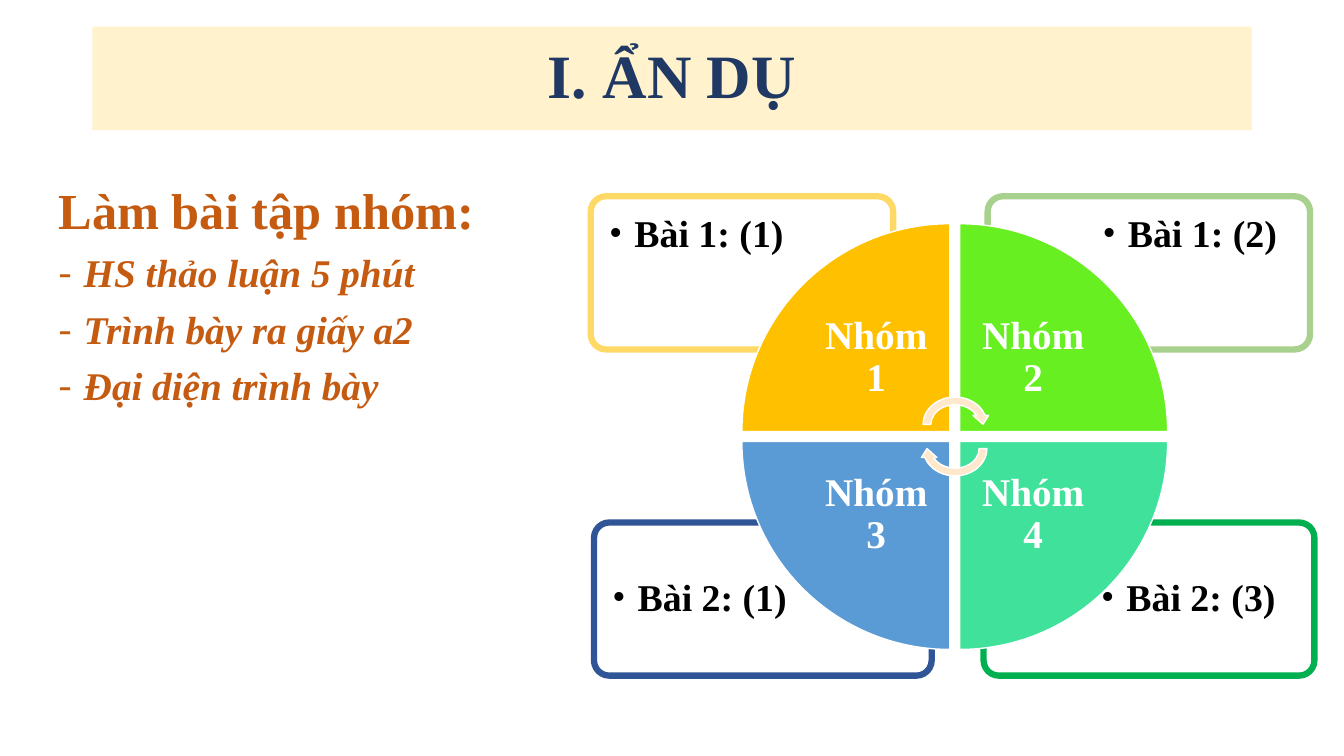
from dataclasses import dataclass

from lxml.etree import SubElement
from pptx import Presentation
from pptx.dml.color import RGBColor
from pptx.enum.shapes import MSO_SHAPE as Preset
from pptx.enum.text import MSO_ANCHOR as Anchor, MSO_AUTO_SIZE as AutoSize, PP_ALIGN as Align
from pptx.oxml.ns import qn
from pptx.shapes.autoshape import Shape
from pptx.slide import Slide
from pptx.text.text import TextFrame, _Paragraph as Paragraph
from pptx.util import Pt


@dataclass(frozen=True)
class Theme:
    font: str = "Times New Roman"
    title_band: str = "FFF2CC"
    title: str = "203864"
    task: str = "C55A11"
    exercise: str = "000000"
    paper: str = "FFFFFF"
    cycle: str = "FFE8CC"
    title_size: float = 44
    heading_size: float = 36
    step_size: float = 28
    group_size: float = 28
    exercise_size: float = 27


@dataclass(frozen=True)
class Group:
    """One quarter of the wheel with its exercise card."""
    label: str
    exercise: str
    col: int
    row: int
    rotation: float
    wedge_color: str
    card_color: str
    card_left: float
    card_width: float


THEME = Theme()
# Back to front
GROUPS = (
    Group("Nhóm 4", "Bài 2: (3)", 1, 1, 180, "3FE19B", "00B050", 702.6, 236.3),
    Group("Nhóm 3", "Bài 2: (1)", 0, 1, 270, "5B9BD5", "2F5597", 424.3, 241.2),
    Group("Nhóm 2", "Bài 1: (2)", 1, 0, 90, "67EF21", "A9D18E", 705.5, 230.3),
    Group("Nhóm 1", "Bài 1: (1)", 0, 0, 0, "FFC000", "FFD966", 422, 216),
)
STEPS = ("HS thảo luận 5 phút", "Trình bày ra giấy a2", "Đại diện trình bày")

CARD_TOP, CARD_PITCH, CARD_HEIGHT = 140.2, 233, 109.4
CARD_TEXT_SHARE, CARD_TEXT_HEIGHT, CARD_EDGE = 0.68, 77.5, 2.4
WHEEL_LEFT, WHEEL_TOP, WEDGE, WEDGE_PITCH = 529.9, 159.8, 148.5, 155.6
LABEL = 105


def add_run(paragraph: Paragraph, words: str, size: float, color: str, italic: bool = False) -> None:
    run = paragraph.add_run()
    run.text = words
    run.font.name = THEME.font
    run.font.size = Pt(size)
    run.font.bold = True
    run.font.italic = italic
    run.font.color.rgb = RGBColor.from_string(color)


def set_bullet(paragraph: Paragraph, mark: str = "") -> None:
    """Give the paragraph a hanging bullet, or none when mark is empty."""
    props = paragraph._p.get_or_add_pPr()
    hang = Pt(18) if mark else 0
    props.set("marL", str(hang))
    props.set("indent", str(-hang))
    if mark:
        SubElement(props, qn("a:buFont")).set("typeface", THEME.font)
        SubElement(props, qn("a:buChar")).set("char", mark)
    else:
        SubElement(props, qn("a:buNone"))


def place(shape: Shape, left: float, top: float, width: float, height: float) -> None:
    shape.left, shape.top, shape.width, shape.height = map(Pt, (left, top, width, height))


def add_preset(slide: Slide, preset: Preset, left: float, top: float, width: float, height: float,
               fill: str, line: str, weight: float, rotation: float = 0) -> Shape:
    shape = slide.shapes.add_shape(preset, *map(Pt, (left, top, width, height)))
    shape.shadow.inherit = False
    shape.fill.solid()
    shape.fill.fore_color.rgb = RGBColor.from_string(fill)
    shape.line.color.rgb = RGBColor.from_string(line)
    shape.line.width = Pt(weight)
    shape.rotation = rotation
    return shape


def add_text_area(slide: Slide, left: float, top: float, width: float, height: float,
                  inset: float) -> TextFrame:
    frame = slide.shapes.add_textbox(*map(Pt, (left, top, width, height))).text_frame
    frame.word_wrap = True
    frame.margin_left = frame.margin_right = frame.margin_top = frame.margin_bottom = Pt(inset)
    frame.paragraphs[0].line_spacing = 0.9
    return frame


def fill_title(title: Shape) -> None:
    place(title, 66, 19, 828, 74)
    title.fill.solid()
    title.fill.fore_color.rgb = RGBColor.from_string(THEME.title_band)
    title.text_frame.auto_size = AutoSize.NONE
    title.text_frame.vertical_anchor = Anchor.MIDDLE
    heading = title.text_frame.paragraphs[0]
    heading.alignment = Align.CENTER
    heading.line_spacing = 0.9
    add_run(heading, "I. ẨN DỤ", THEME.title_size, THEME.title)


def fill_task(body: Shape) -> None:
    place(body, 34.6, 128.9, 828, 342.7)
    frame = body.text_frame
    frame.auto_size = AutoSize.NONE
    heading = frame.paragraphs[0]
    steps = [frame.add_paragraph() for _ in STEPS]
    for paragraph in (heading, *steps):
        paragraph.line_spacing = 0.9
        paragraph.space_before = Pt(10)
    set_bullet(heading)
    add_run(heading, "Làm bài tập nhóm:", THEME.heading_size, THEME.task)
    for paragraph, step in zip(steps, STEPS):
        set_bullet(paragraph, "-")
        add_run(paragraph, step, THEME.step_size, THEME.task, italic=True)


def add_card(slide: Slide, group: Group) -> None:
    top = CARD_TOP + group.row * CARD_PITCH
    card = add_preset(slide, Preset.ROUNDED_RECTANGLE, group.card_left, top, group.card_width,
                      CARD_HEIGHT, THEME.paper, group.card_color, 4.5)
    card.adjustments[0] = 0.1
    paper = card._element.spPr.find(qn("a:solidFill")).find(qn("a:srgbClr"))
    SubElement(paper, qn("a:alpha")).set("val", "90000")

    # The text keeps to the card's outer corner, clear of the wheel
    width = group.card_width * CARD_TEXT_SHARE
    left = group.card_left + (group.card_width - width - CARD_EDGE if group.col else CARD_EDGE)
    text_top = top + (CARD_HEIGHT - CARD_TEXT_HEIGHT - CARD_EDGE if group.row else CARD_EDGE)
    frame = add_text_area(slide, left, text_top, width, CARD_TEXT_HEIGHT, 10.8)
    set_bullet(frame.paragraphs[0], "•")
    add_run(frame.paragraphs[0], group.exercise, THEME.exercise_size, THEME.exercise)


def add_wedge(slide: Slide, group: Group) -> None:
    left = WHEEL_LEFT + group.col * WEDGE_PITCH
    top = WHEEL_TOP + group.row * WEDGE_PITCH
    add_preset(slide, Preset.PIE_WEDGE, left, top, WEDGE, WEDGE, group.wedge_color,
               THEME.paper, 1, group.rotation)

    # The label sits at the wedge's corner nearest the hub
    inward = WEDGE - LABEL
    frame = add_text_area(slide, left + inward * (1 - group.col), top + inward * (1 - group.row),
                          LABEL, LABEL, 15.8)
    frame.vertical_anchor = Anchor.MIDDLE
    frame.paragraphs[0].alignment = Align.CENTER
    add_run(frame.paragraphs[0], group.label, THEME.group_size, THEME.paper)


def main() -> None:
    deck = Presentation()
    deck.slide_width, deck.slide_height = Pt(960), Pt(540)
    slide = deck.slides.add_slide(deck.slide_layouts[1])
    fill_title(slide.shapes.title)
    fill_task(slide.placeholders[1])
    for group in GROUPS:
        add_card(slide, group)
    for group in GROUPS:
        add_wedge(slide, group)
    for top, rotation in ((280.8, 0), (298.1, 180)):
        add_preset(slide, Preset.CIRCULAR_ARROW, 656.6, top, 51.1, 44.6, THEME.cycle,
                   THEME.paper, 1, rotation)
    deck.save("out.pptx")


if __name__ == "__main__":
    main()
